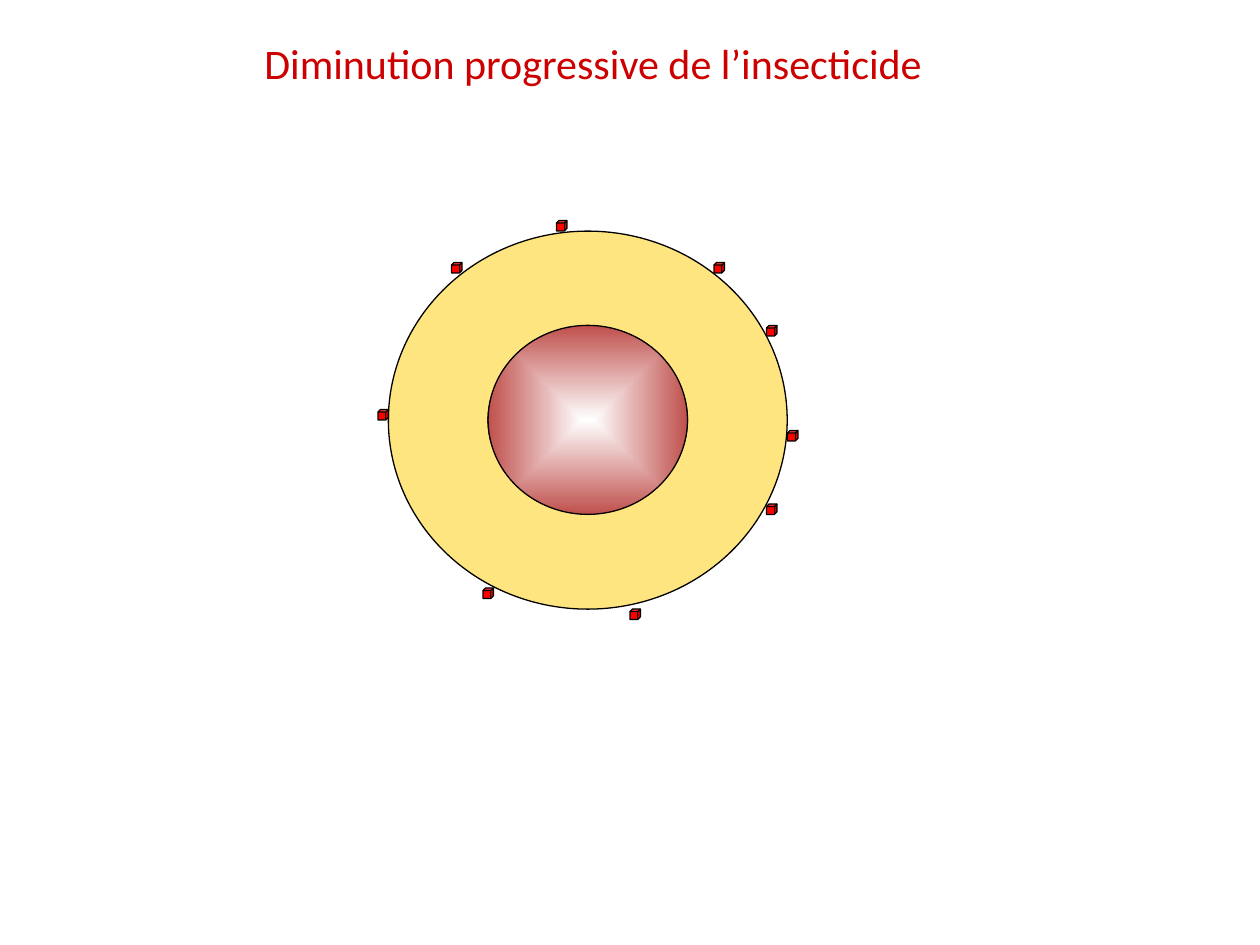
from dataclasses import dataclass

import lxml.etree
import pptx
import pptx.dml.color
import pptx.enum.shapes
import pptx.enum.text
import pptx.oxml
import pptx.oxml.ns
import pptx.util

Cm = pptx.util.Cm
SHAPES = pptx.enum.shapes.MSO_SHAPE
COLOURS = {
    "title": "CC0000",
    "coating": "FFCC00",
    "core_centre": "FFFFFF",
    "core_edge": "C0504D",
    "insecticide": "FF0000",
    "outline": "000000",
}
GRID = 2.54 / 12  # the insecticide cubes are one grid step wide


@dataclass(frozen=True)
class Box:
    left: float
    top: float
    width: float
    height: float

    def lengths(self) -> list[int]:
        return [Cm(value) for value in (self.left, self.top, self.width, self.height)]


TITLE = Box(5.08, 0.64, 15.04, 1.27)
COATING = Box(7.83, 4.66, 8.04, 7.62)
CORE = Box(9.84, 6.56, 4.02, 3.81)
CUBE_CELLS = [
    (73, 48), (75, 41), (68, 25), (73, 31), (60, 58),
    (53, 21), (46, 56), (36, 39), (43, 25),
]


def colour(name: str) -> pptx.dml.color.RGBColor:
    return pptx.dml.color.RGBColor.from_string(COLOURS[name])


def add_outlined_shape(shapes, kind, box: Box):
    shape = shapes.add_shape(kind, *box.lengths())
    shape.shadow.inherit = False
    shape.line.color.rgb = colour("outline")
    shape.line.width = pptx.util.Pt(0.75)
    return shape


def fill_solid(shape, name: str) -> None:
    shape.fill.solid()
    shape.fill.fore_color.rgb = colour(name)


def add_coating(shapes) -> None:
    shape = add_outlined_shape(shapes, SHAPES.DONUT, COATING)
    shape.adjustments[0] = (CORE.left - COATING.left) / COATING.height
    fill_solid(shape, "coating")
    tag = pptx.oxml.ns.qn("a:srgbClr")
    fill_colour = next(shape.fill._xPr.iter(tag))
    lxml.etree.SubElement(fill_colour, pptx.oxml.ns.qn("a:alpha"), val="50000")


def add_core(shapes) -> None:
    """Add the core, its gradient running from the centre to the edges."""
    shape = add_outlined_shape(shapes, SHAPES.OVAL, CORE)
    shape.fill.gradient()
    for stop, position, name in zip(
        shape.fill.gradient_stops, (0, 1), ("core_centre", "core_edge")
    ):
        stop.position = position
        stop.color.rgb = colour(name)
    linear = next(shape._element.spPr.iter(pptx.oxml.ns.qn("a:lin")))
    radial = pptx.oxml.parse_xml(
        f'<a:path {pptx.oxml.ns.nsdecls("a")} path="shape">'
        '<a:fillToRect l="50000" t="50000" r="50000" b="50000"/></a:path>'
    )
    linear.getparent().replace(linear, radial)


def add_insecticide(shapes) -> None:
    group = shapes.add_group_shape()
    for column, row in CUBE_CELLS:
        box = Box(column * GRID, row * GRID, GRID, GRID)
        cube = add_outlined_shape(group.shapes, SHAPES.CUBE, box)
        cube.adjustments[0] = 0.25
        fill_solid(cube, "insecticide")


def add_title(shapes) -> None:
    text_box = shapes.add_textbox(*TITLE.lengths())
    frame = text_box.text_frame
    frame.word_wrap = True
    frame.auto_size = pptx.enum.text.MSO_AUTO_SIZE.SHAPE_TO_FIT_TEXT
    run = frame.paragraphs[0].add_run()
    run.text = "Diminution progressive de l’insecticide"
    for attribute, value in {"name": "Calibri", "size": pptx.util.Pt(24)}.items():
        setattr(run.font, attribute, value)
    run.font.color.rgb = colour("title")


def main() -> None:
    presentation = pptx.Presentation()
    presentation.slide_width = Cm(25.4)
    presentation.slide_height = Cm(19.05)
    slide = presentation.slides.add_slide(presentation.slide_layouts[6])
    for add_part in (add_coating, add_core, add_insecticide, add_title):
        add_part(slide.shapes)
    presentation.save("out.pptx")


if __name__ == "__main__":
    main()
